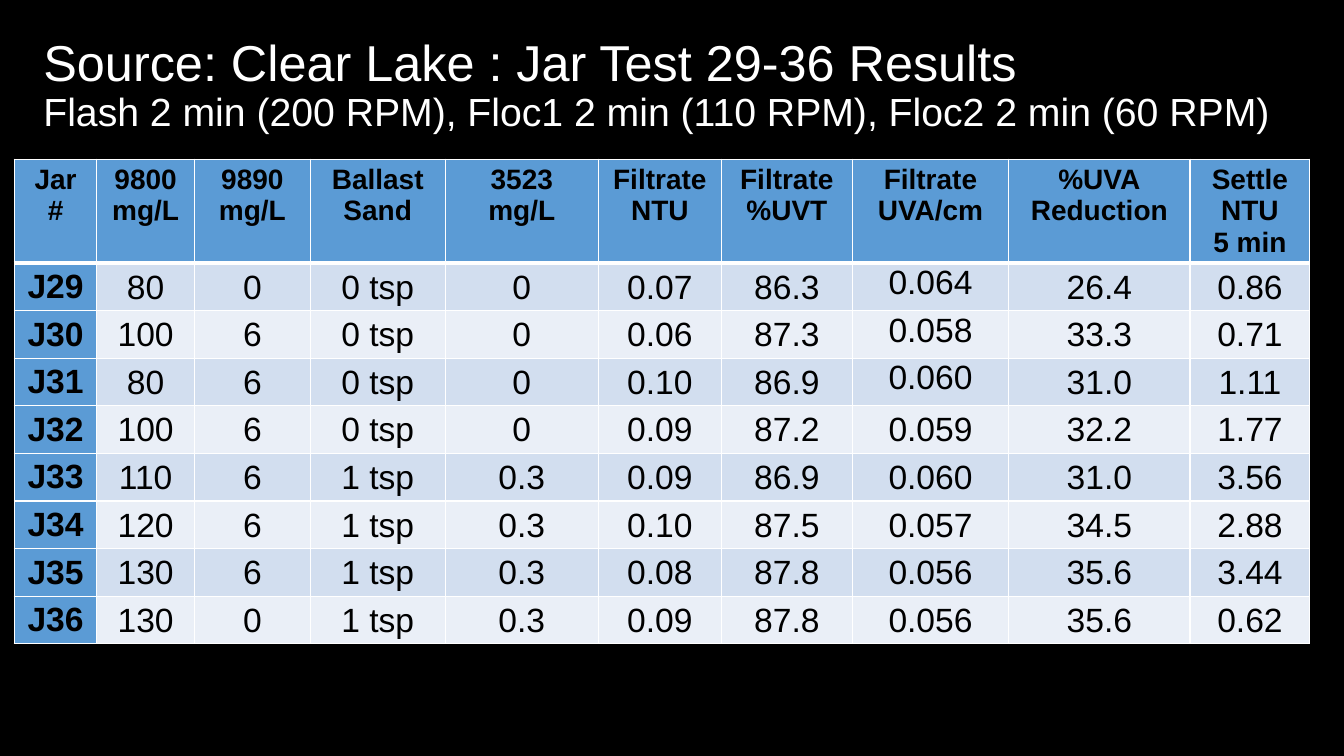
from lxml.etree import SubElement
from pptx import Presentation
from pptx.dml.color import RGBColor
from pptx.enum.text import MSO_ANCHOR, MSO_AUTO_SIZE, PP_ALIGN
from pptx.oxml.ns import qn
from pptx.util import Cm, Pt

COLORS = {
    "background": "000000",
    "title": "FFFFFF",
    "text": "000000",
    "border": "FFFFFF",
    "header": "5B9BD5",
    "odd": "D2DEEF",
    "even": "EAEFF7",
}
TITLE_LINES = [
    ("Source: Clear Lake : Jar Test 29-36 Results", 36),
    ("Flash 2 min (200 RPM), Floc1 2 min (110 RPM), Floc2 2 min (60 RPM)", 28),
]
HEADERS = [
    "Jar #", "9800\nmg/L", "9890\nmg/L", "Ballast\nSand", "3523\nmg/L",
    "Filtrate\nNTU", "Filtrate\n%UVT", "Filtrate\nUVA/cm",
    "%UVA\nReduction", "Settle\nNTU\n5 min",
]
RESULTS = [
    ["J29", "80", "0", "0 tsp", "0", "0.07", "86.3", "0.064", "26.4", "0.86"],
    ["J30", "100", "6", "0 tsp", "0", "0.06", "87.3", "0.058", "33.3", "0.71"],
    ["J31", "80", "6", "0 tsp", "0", "0.10", "86.9", "0.060", "31.0", "1.11"],
    ["J32", "100", "6", "0 tsp", "0", "0.09", "87.2", "0.059", "32.2", "1.77"],
    ["J33", "110", "6", "1 tsp", "0.3", "0.09", "86.9", "0.060", "31.0", "3.56"],
    ["J34", "120", "6", "1 tsp", "0.3", "0.10", "87.5", "0.057", "34.5", "2.88"],
    ["J35", "130", "6", "1 tsp", "0.3", "0.08", "87.8", "0.056", "35.6", "3.44"],
    ["J36", "130", "0", "1 tsp", "0.3", "0.09", "87.8", "0.056", "35.6", "0.62"],
]
COLUMN_WIDTHS = [2.08, 2.46, 2.92, 3.4, 3.86, 3.1, 3.3, 3.94, 4.57, 3.02]
HEADER_HEIGHT = 2.62
ROW_HEIGHT = 1.19
UVA_COLUMN = HEADERS.index("Filtrate\nUVA/cm")
TOP_ALIGNED_UVA_ROWS = 3
VALUE_CELL = {
    "margin_left": Cm(0.03),
    "margin_right": Cm(0.03),
    "margin_top": Cm(0.03),
    "margin_bottom": Cm(0),
}


def apply_format(target, values):
    for name, value in values.items():
        setattr(target, name, value)


def paint(fill, color):
    fill.solid()
    fill.fore_color.rgb = RGBColor.from_string(COLORS[color])


def format_font(font, size, color, bold=False):
    apply_format(font, {"name": "Arial", "size": Pt(size), "bold": bold})
    font.color.rgb = RGBColor.from_string(COLORS[color])


def add_title(page):
    box = page.shapes.title
    apply_format(box, {"left": Cm(0.84), "top": Cm(0.33),
                       "width": Cm(31.67), "height": Cm(3.68)})
    apply_format(box.text_frame, {"word_wrap": True,
                                  "auto_size": MSO_AUTO_SIZE.NONE,
                                  "vertical_anchor": MSO_ANCHOR.MIDDLE})
    para = box.text_frame.paragraphs[0]
    apply_format(para, {"alignment": PP_ALIGN.LEFT, "line_spacing": 0.9})
    for index, (line, size) in enumerate(TITLE_LINES):
        if index:
            para.add_line_break()
        span = para.add_run()
        span.text = line
        format_font(span.font, size, "title")


def add_borders(cell, row):
    widths = {"lnL": 1, "lnR": 1,
              "lnT": 3 if row == 1 else 1,
              "lnB": 3 if row == 0 else 1}
    properties = cell._tc.get_or_add_tcPr()
    for side, width in widths.items():
        line = SubElement(properties, qn(f"a:{side}"), w=str(Pt(width)))
        solid = SubElement(line, qn("a:solidFill"))
        SubElement(solid, qn("a:srgbClr"), val=COLORS["border"])


def fill_cell(cell, text, row, column):
    is_heading = row == 0 or column == 0
    cell.text = text
    for para in cell.text_frame.paragraphs:
        para.alignment = PP_ALIGN.CENTER
        for span in para.runs:
            format_font(span.font, 24 if row else 20, "text", is_heading)
    if not is_heading:
        apply_format(cell, VALUE_CELL)
    at_top = column == UVA_COLUMN and row <= TOP_ALIGNED_UVA_ROWS
    cell.vertical_anchor = (MSO_ANCHOR.TOP if is_heading or at_top
                            else MSO_ANCHOR.MIDDLE)
    add_borders(cell, row)
    paint(cell.fill, "header" if is_heading else "odd" if row % 2 else "even")


def add_results_table(page):
    rows = [HEADERS, *RESULTS]
    heights = [HEADER_HEIGHT] + [ROW_HEIGHT] * len(RESULTS)
    table = page.shapes.add_table(
        len(rows), len(HEADERS), Cm(0.36), Cm(4.01),
        Cm(sum(COLUMN_WIDTHS)), Cm(sum(heights))).table
    apply_format(table, {"first_row": True, "first_col": True,
                         "horz_banding": False})
    for column, width in zip(table.columns, COLUMN_WIDTHS):
        column.width = Cm(width)
    for row, (texts, height) in enumerate(zip(rows, heights)):
        table.rows[row].height = Cm(height)
        for column, text in enumerate(texts):
            fill_cell(table.cell(row, column), text, row, column)


def main():
    deck = Presentation()
    apply_format(deck, {"slide_width": Cm(33.87), "slide_height": Cm(19.05)})
    page = deck.slides.add_slide(deck.slide_layouts.get_by_name("Title Only"))
    paint(page.background.fill, "background")
    add_title(page)
    add_results_table(page)
    deck.save("out.pptx")


if __name__ == "__main__":
    main()
